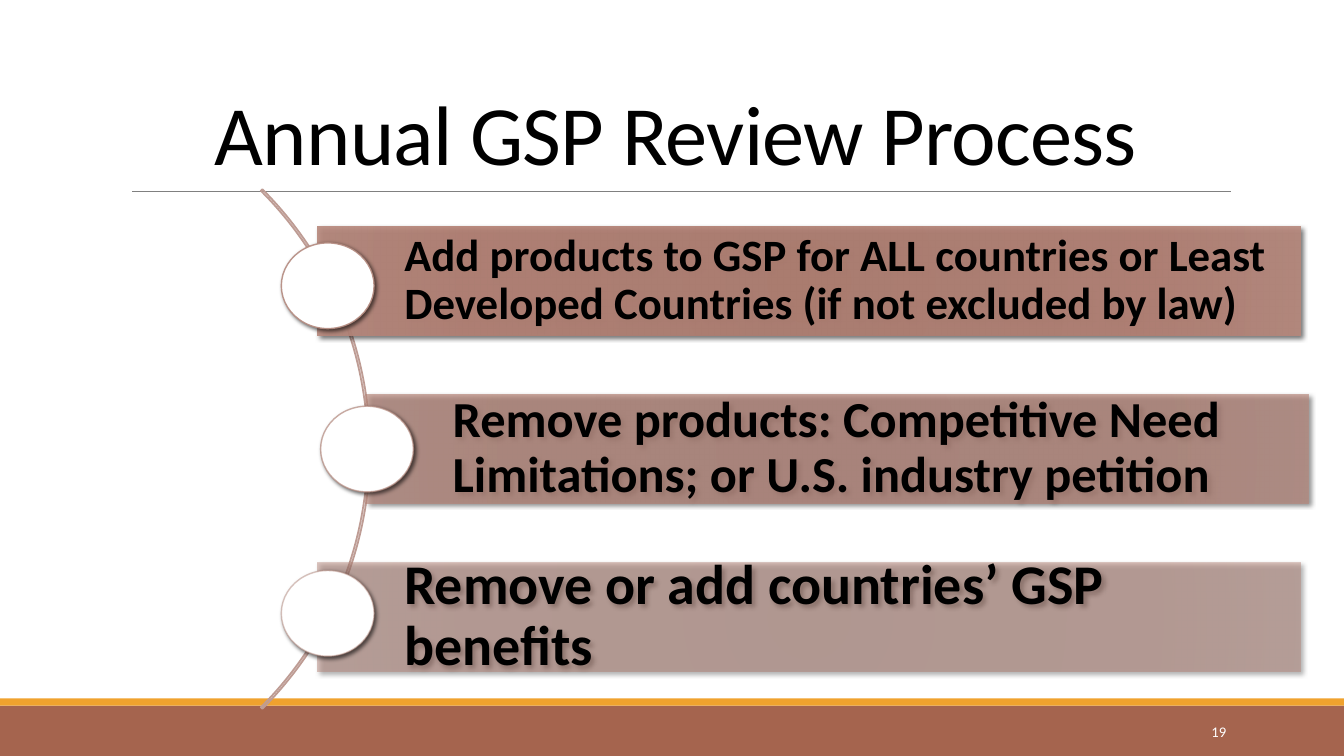
from dataclasses import dataclass

from lxml import etree
from pptx import Presentation
from pptx.dml.color import RGBColor
from pptx.enum.shapes import MSO_CONNECTOR, MSO_SHAPE
from pptx.enum.text import MSO_ANCHOR, PP_ALIGN
from pptx.oxml import parse_xml
from pptx.oxml.ns import nsdecls, qn
from pptx.util import Inches, Pt

RECTANGLE, OVAL, ARC = MSO_SHAPE.RECTANGLE, MSO_SHAPE.OVAL, MSO_SHAPE.BLOCK_ARC
STRAIGHT = MSO_CONNECTOR.STRAIGHT
LEFT, CENTER, RIGHT = PP_ALIGN.LEFT, PP_ALIGN.CENTER, PP_ALIGN.RIGHT
MIDDLE, BOTTOM = MSO_ANCHOR.MIDDLE, MSO_ANCHOR.BOTTOM
COLUMNS, ROWS = 1333, 750
CELL = Inches(0.01)

STEPS = [
    ("Add products to GSP for ALL countries or Least Developed Countries (if not excluded by law)", 32, 90),
    ("Remove products: Competitive Need Limitations; or U.S. industry petition", 36, 70),
    ("Remove or add countries’ GSP benefits", 40, 50),
]


@dataclass(frozen=True)
class Theme:
    """Colours and type sizes of the slide."""
    font: str = "Calibri"
    text: str = "000000"
    white: str = "FFFFFF"
    band: str = "A5644E"
    stripe: str = "F0A22E"
    rule: str = "808080"
    arc: str = "BE9C94"
    ring: str = "B58B80"
    bar: tuple = ((0, "B07D70"), (34, "B17F72"), (70, "B48073"), (100, "B8897D"))
    title_size: float = 60.3
    number_size: float = 10.5


@dataclass(frozen=True)
class Box:
    """A rectangle measured in grid cells."""
    left: int
    top: int
    width: int
    height: int

    def inner(self, left, top, width, height):
        """Return a box placed relative to this one."""
        return Box(self.left + left, self.top + top, width, height)

    def lengths(self):
        """Return left, top, width and height as slide lengths."""
        return [CELL * cells for cells in (self.left, self.top, self.width, self.height)]


THEME = Theme()


def add_shape(slide, kind, box, fill=None, line=None, line_width=1):
    """Add a preset shape with a plain fill and outline."""
    shape = slide.shapes.add_shape(kind, *box.lengths())
    shape.shadow.inherit = False
    if fill:
        shape.fill.solid()
        shape.fill.fore_color.rgb = RGBColor.from_string(fill)
    else:
        shape.fill.background()
    if line:
        shape.line.color.rgb = RGBColor.from_string(line)
        shape.line.width = Pt(line_width)
    else:
        shape.line.fill.background()
    return shape


def write_text(shape, text, size, color=THEME.text, bold=False, align=LEFT, anchor=MIDDLE,
               line_spacing=1.0, insets=(0.1, 0.05, 0.1, 0.05), tracking=0):
    """Write one formatted paragraph into a shape."""
    frame = shape.text_frame
    frame.word_wrap = True
    frame.vertical_anchor = anchor
    frame.margin_left, frame.margin_top, frame.margin_right, frame.margin_bottom = map(Inches, insets)
    paragraph = frame.paragraphs[0]
    paragraph.alignment = align
    paragraph.line_spacing = line_spacing
    run = paragraph.add_run()
    run.text = text
    run.font.name = THEME.font
    run.font.size = Pt(size)
    run.font.bold = bold
    run.font.color.rgb = RGBColor.from_string(color)
    if tracking:
        run.font._element.set("spc", str(round(tracking * 100)))


def add_shadow(shape, blur):
    """Give a shape a soft shadow towards the lower right."""
    effects = shape._element.spPr.find(qn("a:effectLst"))
    effects.append(parse_xml(
        f'<a:outerShdw {nsdecls("a")} blurRad="{Pt(blur)}" dist="{Pt(2)}" dir="2700000" rotWithShape="0">'
        f'<a:srgbClr val="{THEME.text}"><a:alpha val="60000"/></a:srgbClr></a:outerShdw>'))


def set_gradient(shape, stops, opacity):
    """Fill a shape with a translucent circular gradient."""
    properties = shape._element.spPr
    stop_xml = "".join(
        f'<a:gs pos="{position * 1000}"><a:srgbClr val="{color}"><a:alpha val="{opacity * 1000}"/>'
        "</a:srgbClr></a:gs>" for position, color in stops)
    gradient = parse_xml(
        f'<a:gradFill {nsdecls("a")} rotWithShape="1"><a:gsLst>{stop_xml}</a:gsLst><a:path path="circle">'
        '<a:fillToRect l="100000" t="100000" r="100000" b="100000"/></a:path></a:gradFill>')
    properties.replace(properties.find(qn("a:noFill")), gradient)


def set_line_opacity(shape, opacity):
    """Make the outline of a shape translucent."""
    color = shape._element.spPr.find(f'{qn("a:ln")}/{qn("a:solidFill")}/{qn("a:srgbClr")}')
    etree.SubElement(color, qn("a:alpha")).set("val", str(opacity * 1000))


def add_footer(slide, box):
    """Draw the footer band, its stripe and the page number."""
    add_shape(slide, RECTANGLE, box.inner(0, 7, box.width, box.height - 7), THEME.band)
    add_shape(slide, RECTANGLE, box.inner(0, 0, box.width, 7), THEME.stripe)
    number = slide.shapes.add_textbox(*box.inner(1083, 13, 143, 40).lengths())
    write_text(number, "19", THEME.number_size, color=THEME.white, align=RIGHT)


def add_header(slide, box):
    """Draw the title above its rule."""
    bottom = box.top + box.height
    rule = slide.shapes.add_connector(
        STRAIGHT, CELL * box.left, CELL * bottom, CELL * (box.left + box.width), CELL * bottom)
    rule.line.color.rgb = RGBColor.from_string(THEME.rule)
    rule.line.width = Pt(0.5)
    etree.SubElement(rule._element.spPr, qn("a:effectLst"))
    title = slide.shapes.add_textbox(*box.inner(61, 0, 975, 153).lengths())
    write_text(title, "Annual GSP Review Process ", THEME.title_size, align=CENTER,
               anchor=BOTTOM, line_spacing=0.85, tracking=-0.5)


def add_step(slide, box, circle, text, size, opacity):
    """Draw one step: a bar with its text and a circle on the arc."""
    bar = add_shape(slide, RECTANGLE, box)
    set_gradient(bar, THEME.bar, opacity)
    add_shadow(bar, 3.5)
    inset = round(size / 360, 2)
    write_text(bar, text, size, bold=True, line_spacing=0.9, insets=(0.86, inset, inset, inset))
    dot = add_shape(slide, OVAL, circle, THEME.white, THEME.ring)
    set_line_opacity(dot, opacity)
    add_shadow(dot, 3)


def add_process(slide, box):
    """Draw the arc and the steps spread evenly along it."""
    arc = add_shape(slide, ARC, box.inner(-641, -144, 729, 729), line=THEME.arc, line_width=1.25)
    for index, value in enumerate((189, 27, 0.003)):
        arc.adjustments[index] = value
    for index, (text, size, opacity) in enumerate(STEPS):
        middle = index % 2
        bar = box.inner(36 + 48 * middle, round(166.5 * index), 975 - 40 * middle, 108)
        circle = box.inner(39 * middle, 16 + round(162.5 * index), 92, 85)
        add_step(slide, bar, circle, text, size, opacity)


def main():
    """Build and save the slide."""
    presentation = Presentation()
    presentation.slide_width = CELL * COLUMNS
    presentation.slide_height = CELL * ROWS
    slide = presentation.slides.add_slide(presentation.slide_layouts[6])
    add_footer(slide, Box(0, 693, COLUMNS, 57))
    add_header(slide, Box(131, 33, 1090, 157))
    add_process(slide, Box(279, 225, 1019, 441))
    presentation.save("out.pptx")


if __name__ == "__main__":
    main()
